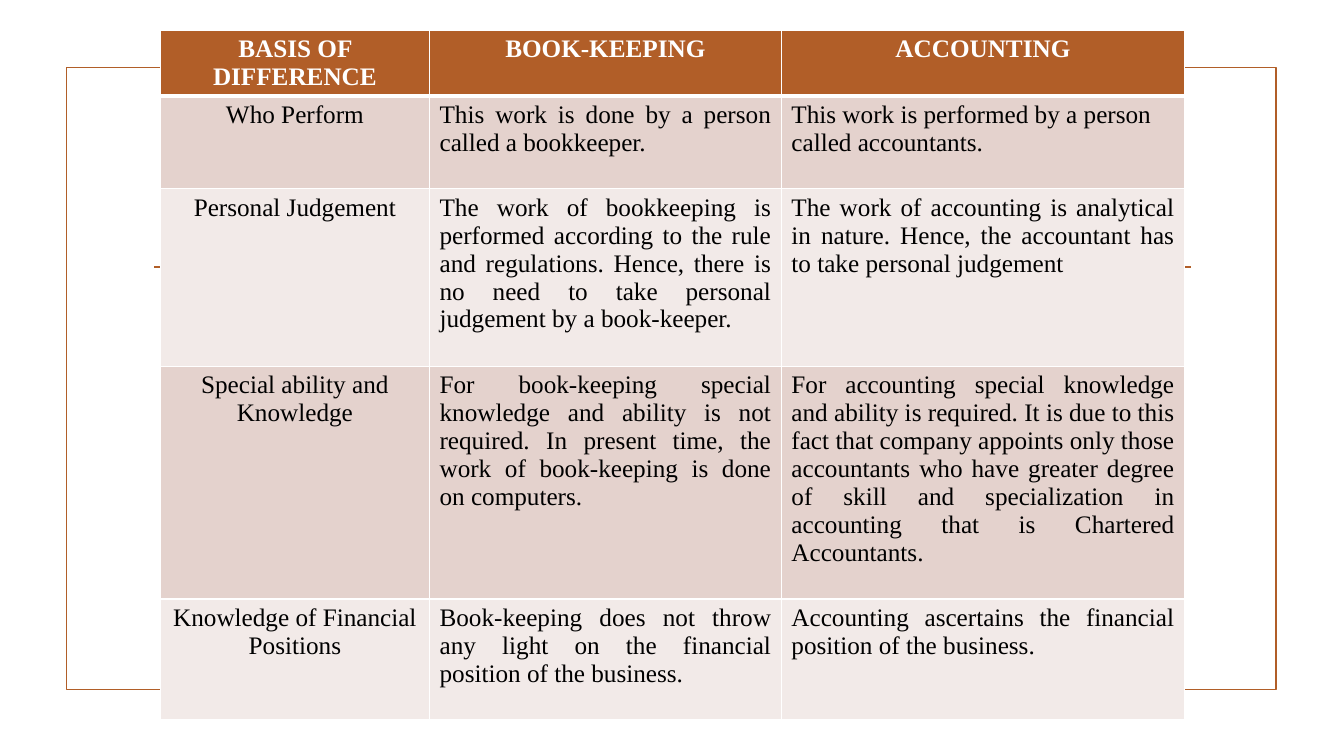
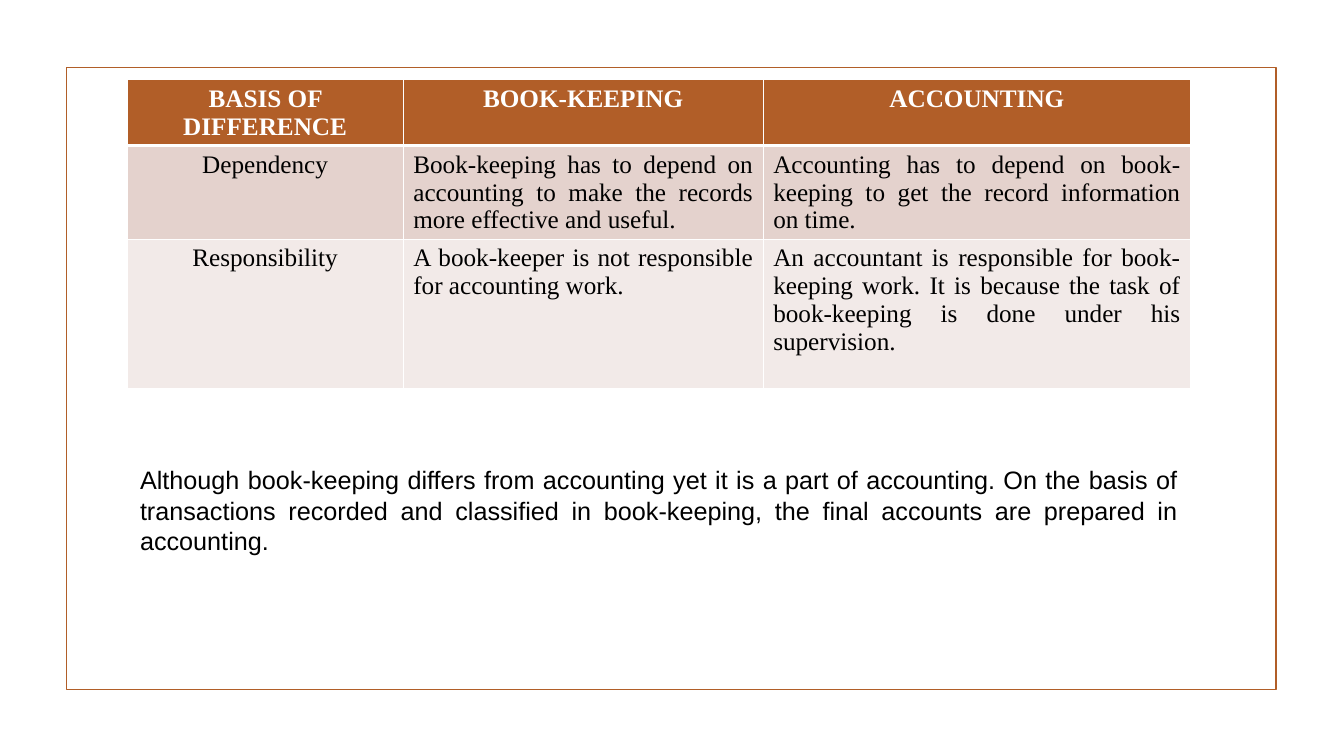
from lxml import etree
from pptx import Presentation
from pptx import util as u
from pptx.dml.color import RGBColor
from pptx.enum import shapes, text
from pptx.oxml.ns import qn

RUST = RGBColor(0xB1, 0x5E, 0x28)
ROSE = RGBColor(0xE4, 0xD2, 0xCD)
PALE = RGBColor(0xF2, 0xEA, 0xE8)
WHITE = RGBColor(0xFF, 0xFF, 0xFF)
BLACK = RGBColor(0x00, 0x00, 0x00)
LEFT, CENTER, JUSTIFY = text.PP_ALIGN.LEFT, text.PP_ALIGN.CENTER, text.PP_ALIGN.JUSTIFY

HEADER = ("BASIS OF DIFFERENCE", "BOOK-KEEPING", "ACCOUNTING")
# Each table: left, top, column widths, row heights, body rows
TABLES = [
    (1.59, 0.3, (2.67, 3.49, 4), (0.65, 0.92, 1.76, 2.31, 1.2), [
        ("Who Perform",
         "This work is done by a person called a bookkeeper.",
         "This work is performed by a person called accountants."),
        ("Personal Judgement",
         "The work of bookkeeping is performed according to the rule and regulations. "
         "Hence, there is no need to take personal judgement by a book-keeper.",
         "The work of accounting is analytical in nature. Hence, the accountant has "
         "to take personal judgement"),
        ("Special ability and Knowledge",
         "For book-keeping special knowledge and ability is not required. In present "
         "time, the work of book-keeping is done on computers.",
         "For accounting special knowledge and ability is required. It is due to this "
         "fact that company appoints only those accountants who have greater degree of "
         "skill and specialization in accounting that is Chartered Accountants."),
        ("Knowledge of Financial Positions",
         "Book-keeping does not throw any light on the financial position of the business.",
         "Accounting ascertains the financial position of the business."),
    ]),
    (1.26, 0.79, (2.74, 3.57, 4.24), (0.65, 0.92, 1.48), [
        ("Dependency",
         "Book-keeping has to depend on accounting to make the records more effective "
         "and useful.",
         "Accounting has to depend on book-keeping to get the record information on time."),
        ("Responsibility",
         "A book-keeper is not responsible for accounting work.",
         "An accountant is responsible for book-keeping work. It is because the task of "
         "book-keeping is done under his supervision."),
    ]),
]
CLOSING = ("Although book-keeping differs from accounting yet it is a part of accounting. "
           "On the basis of transactions recorded and classified in book-keeping, the final "
           "accounts are prepared in accounting.")


def set_borders(cell, top, bottom):
    """Draw white cell borders: 1 pt at the sides, the given points above and below."""
    tcPr = cell._tc.get_or_add_tcPr()
    for i, (tag, width) in enumerate((("lnL", 1), ("lnR", 1), ("lnT", top), ("lnB", bottom))):
        ln = etree.Element(qn(f"a:{tag}"), w=str(u.Pt(width)))
        fill = etree.SubElement(ln, qn("a:solidFill"))
        etree.SubElement(fill, qn("a:srgbClr"), val=str(WHITE))
        tcPr.insert(i, ln)


def style_paragraph(p, font, color, align, bold=False):
    p.alignment = align
    p.font.name, p.font.size, p.font.bold = font, u.Pt(18), bold
    p.font.color.rgb = color


prs = Presentation()
prs.slide_width, prs.slide_height = u.Inches(13.33), u.Inches(7.5)

for left, top, widths, heights, body in TABLES:
    s = prs.slides.add_slide(prs.slide_layouts[6])

    frame = s.shapes.add_shape(shapes.MSO_SHAPE.RECTANGLE, u.Inches(0.66), u.Inches(0.67),
                               u.Inches(12), u.Inches(6.17))
    frame.shadow.inherit = False
    frame.fill.background()
    rule = s.shapes.add_connector(shapes.MSO_CONNECTOR.STRAIGHT, u.Inches(1.53),
                                  u.Inches(2.65), u.Inches(11.81), u.Inches(2.65))
    etree.SubElement(rule._element.spPr, qn("a:effectLst"))
    for sp in (frame, rule):
        sp.line.color.rgb, sp.line.width = RUST, u.Pt(1.25)

    table = s.shapes.add_table(len(heights), len(widths), u.Inches(left), u.Inches(top),
                               u.Inches(sum(widths)), u.Inches(sum(heights))).table
    for column, width in zip(table.columns, widths):
        column.width = u.Inches(width)
    for row, height in zip(table.rows, heights):
        row.height = u.Inches(height)

    for r, row in enumerate([HEADER, *body]):
        for c, words in enumerate(row):
            cell = table.cell(r, c)
            cell.text = words
            cell.fill.solid()
            cell.fill.fore_color.rgb = RUST if r == 0 else ROSE if r % 2 else PALE
            set_borders(cell, top=3 if r == 1 else 1, bottom=3 if r == 0 else 1)
            style_paragraph(cell.text_frame.paragraphs[0], "Times New Roman",
                            BLACK if r else WHITE,
                            JUSTIFY if r and c else CENTER, bold=r == 0)

# The first accounting answer is the only one set ragged right
first_table = next(sp for sp in prs.slides[0].shapes if sp.has_table).table
first_table.cell(1, 2).text_frame.paragraphs[0].alignment = LEFT

closing = s.shapes.add_textbox(u.Inches(1.29), u.Inches(4.56), u.Inches(10.49), u.Inches(1.01))
tf = closing.text_frame
tf.word_wrap = True
tf.auto_size = text.MSO_AUTO_SIZE.SHAPE_TO_FIT_TEXT
tf.text = CLOSING
style_paragraph(tf.paragraphs[0], "Arial", BLACK, JUSTIFY)

prs.save("out.pptx")
